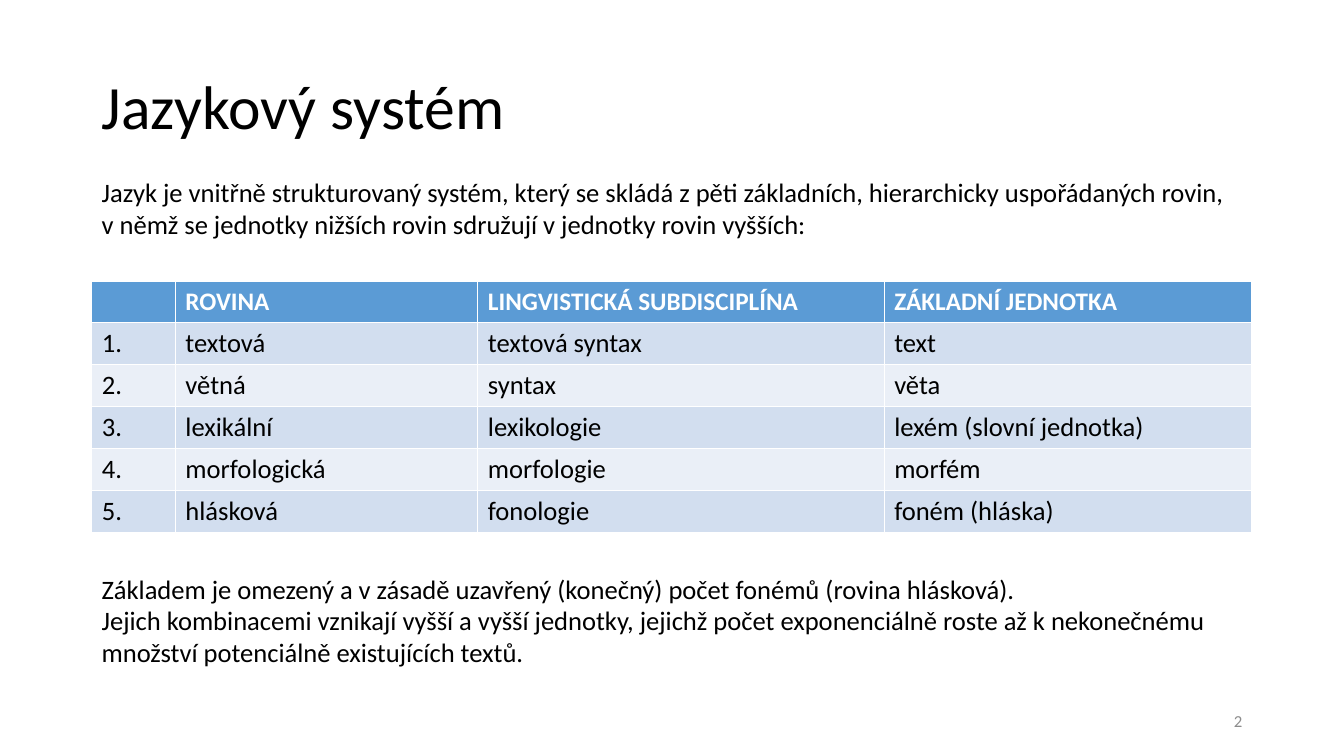
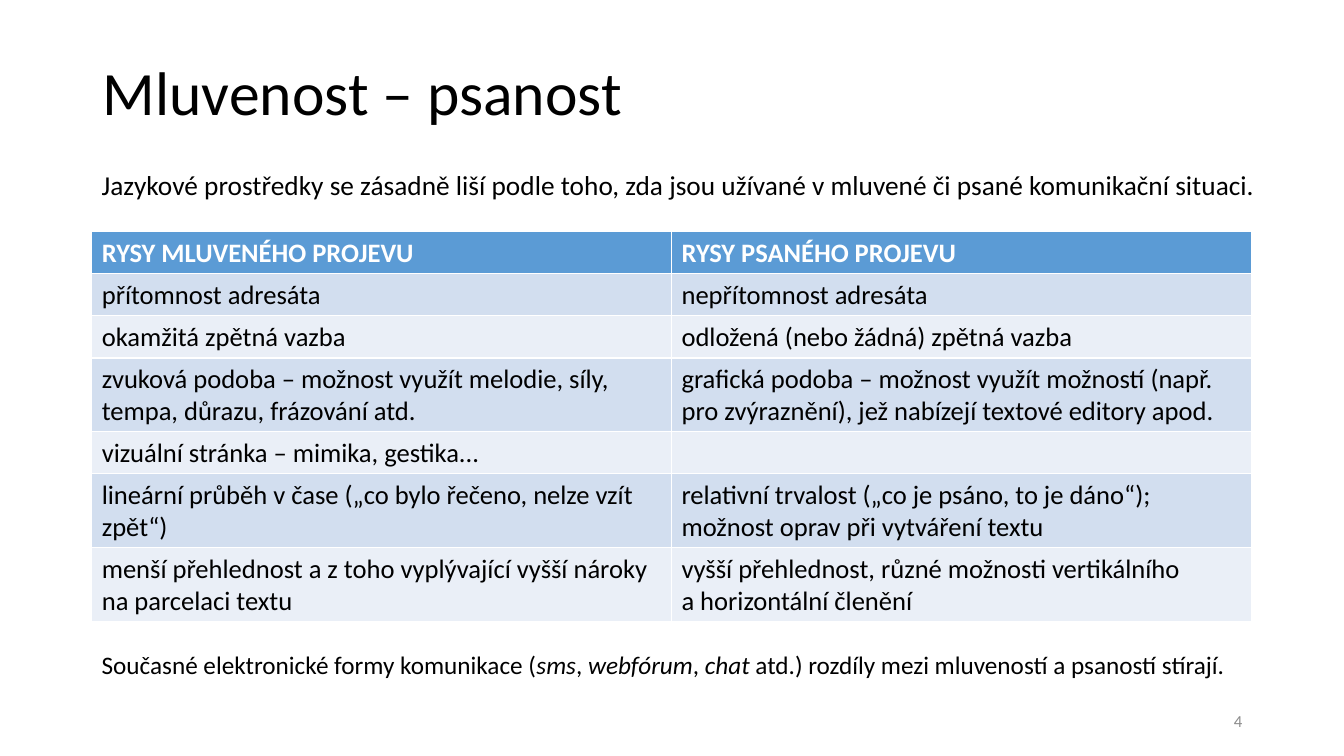
from pptx import Presentation
from pptx.dml.color import RGBColor
from pptx.enum.text import MSO_ANCHOR, MSO_AUTO_SIZE, PP_ALIGN
from pptx.util import Emu, Pt

TOP, MID = MSO_ANCHOR.TOP, MSO_ANCHOR.MIDDLE
LEFT, RIGHT = PP_ALIGN.LEFT, PP_ALIGN.RIGHT
FIXED = MSO_AUTO_SIZE.NONE
SCALE = 9144
EDGE, WIDE = 91, 1150


def px(num):
    return Emu(num * SCALE)


def color(code):
    return RGBColor.from_string(code)


def write(frame, text, size=19, ink="000000", bold=False, align=LEFT,
          font="Calibri", space=None):
    """Each line of a list is a paragraph; asterisks enclose italics."""
    lines = [text] if isinstance(text, str) else text
    for row, line in enumerate(lines):
        para = frame.add_paragraph() if row else frame.paragraphs[0]
        para.alignment = align
        para.line_spacing = space
        for turn, part in enumerate(line.split("*")):
            for step, piece in enumerate(part.split("\n")):
                if step:
                    para.add_line_break()
                if not piece:
                    continue
                run = para.add_run()
                run.text = piece
                face = run.font
                face.name, face.size = font, Pt(size)
                face.bold, face.italic = bold, turn % 2 == 1
                face.color.rgb = color(ink)


class Deck:
    head = "5B9BD5"
    bands = ("EAEFF7", "D2DEEF")
    light = "FFFFFF"
    muted = "8C8C8C"

    def __init__(self):
        self.file = Presentation()
        self.file.slide_width = px(1333)
        self.file.slide_height = px(750)
        self.slide = None

    def page(self, title, top, high, number, left=EDGE):
        self.slide = self.file.slides.add_slide(self.file.slide_layouts[5])
        shape = self.slide.shapes.title
        shape.left, shape.top = px(left), px(top)
        shape.width, shape.height = px(WIDE), px(high)
        frame = shape.text_frame
        frame.auto_size = FIXED
        frame.vertical_anchor = MID
        write(frame, title, size=44, space=0.9)
        self.note(number, 695, 40, left=942, wide=300, anchor=MID,
                  size=12, ink=self.muted, align=RIGHT)

    def note(self, text, top, high, left=EDGE, wide=WIDE, anchor=TOP, **style):
        box = self.slide.shapes.add_textbox(px(left), px(top), px(wide), px(high))
        frame = box.text_frame
        frame.word_wrap = True
        frame.vertical_anchor = anchor
        write(frame, text, **style)

    def table(self, rows, cols, top, size=19, high=41):
        shape = self.slide.shapes.add_table(
            len(rows), len(cols), px(EDGE), px(top), px(sum(cols)), px(high * len(rows)))
        grid = shape.table
        for col, wide in zip(grid.columns, cols):
            col.width = px(wide)
        for r, row in enumerate(rows):
            grid.rows[r].height = px(high)
            for c, text in enumerate(row):
                cell = grid.cell(r, c)
                cell.fill.solid()
                cell.fill.fore_color.rgb = color(self.bands[r % 2] if r else self.head)
                if r:
                    write(cell.text_frame, text)
                else:
                    write(cell.text_frame, text, size=size, ink=self.light, bold=True)


def main():
    deck = Deck()

    deck.page("Jazykový systém", 52, 114, "2")
    deck.table([
        ("", "ROVINA", "LINGVISTICKÁ SUBDISCIPLÍNA", "ZÁKLADNÍ JEDNOTKA"),
        ("1.", "textová", "textová syntax", "text"),
        ("2.", "větná", "syntax", "věta"),
        ("3.", "lexikální", "lexikologie", "lexém (slovní jednotka)"),
        ("4.", "morfologická", "morfologie", "morfém"),
        ("5.", "hlásková", "fonologie", "foném (hláska)"),
    ], (83, 300, 403, 364), 279, size=18)
    deck.note("Jazyk je vnitřně strukturovaný systém, který se skládá z pěti základních, "
              "hierarchicky uspořádaných rovin, \nv němž se jednotky nižších rovin "
              "sdružují v jednotky rovin vyšších:", 170, 74)
    deck.note(["Základem je omezený a v zásadě uzavřený (konečný) počet fonémů "
               "(rovina hlásková).",
               "Jejich kombinacemi vznikají vyšší a vyšší jednotky, jejichž počet "
               "exponenciálně roste až k nekonečnému množství potenciálně "
               "existujících textů."], 563, 106)

    deck.page("Mluvenost – psanost", 27, 135, "4", left=92)
    deck.table([
        ("RYSY MLUVENÉHO PROJEVU", "RYSY PSANÉHO PROJEVU"),
        ("přítomnost adresáta", "nepřítomnost adresáta"),
        ("okamžitá zpětná vazba", "odložená (nebo žádná) zpětná vazba"),
        ("zvuková podoba – možnost využít melodie, síly, tempa, důrazu, frázování atd.",
         "grafická podoba – možnost využít možností (např. pro zvýraznění), "
         "jež nabízejí textové editory apod."),
        ("vizuální stránka – mimika, gestika...", ""),
        ("lineární průběh v čase („co bylo řečeno, nelze vzít zpět“)",
         "relativní trvalost („co je psáno, to je dáno“);\n"
         "možnost oprav při vytváření textu"),
        ("menší přehlednost a z toho vyplývající vyšší nároky \nna parcelaci textu",
         "vyšší přehlednost, různé možnosti vertikálního \na horizontální členění"),
    ], (575, 575), 230)
    deck.note("Jazykové prostředky se zásadně liší podle toho, zda jsou užívané "
              "v mluvené či psané komunikační situaci.", 162, 44, wide=1179, size=19.5)
    deck.note("Současné elektronické formy komunikace (*sms*, *webfórum*, *chat* atd.) "
              "rozdíly mezi mluveností a psaností stírají.", 639, 40, size=18)

    deck.file.save("out.pptx")


if __name__ == "__main__":
    main()
